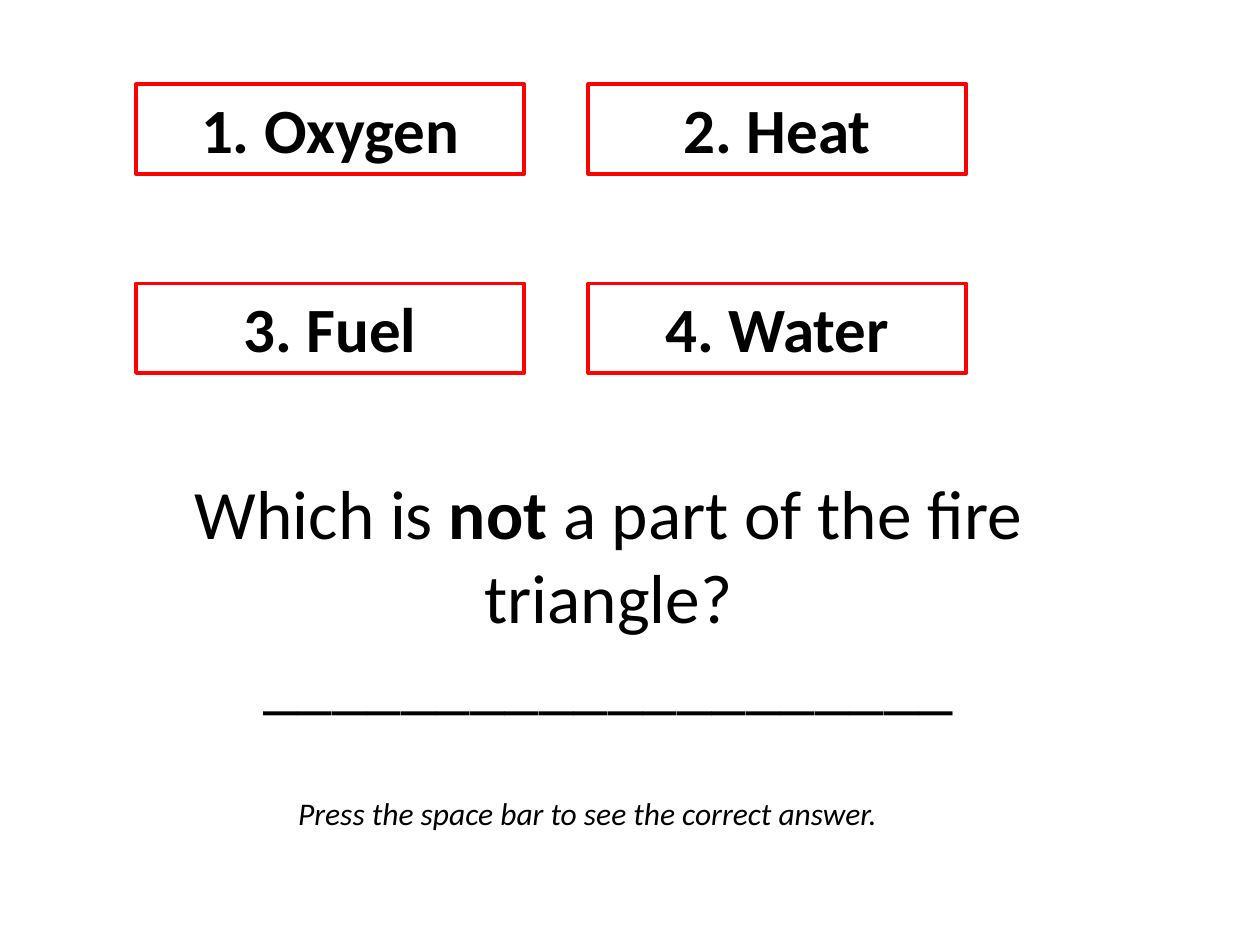
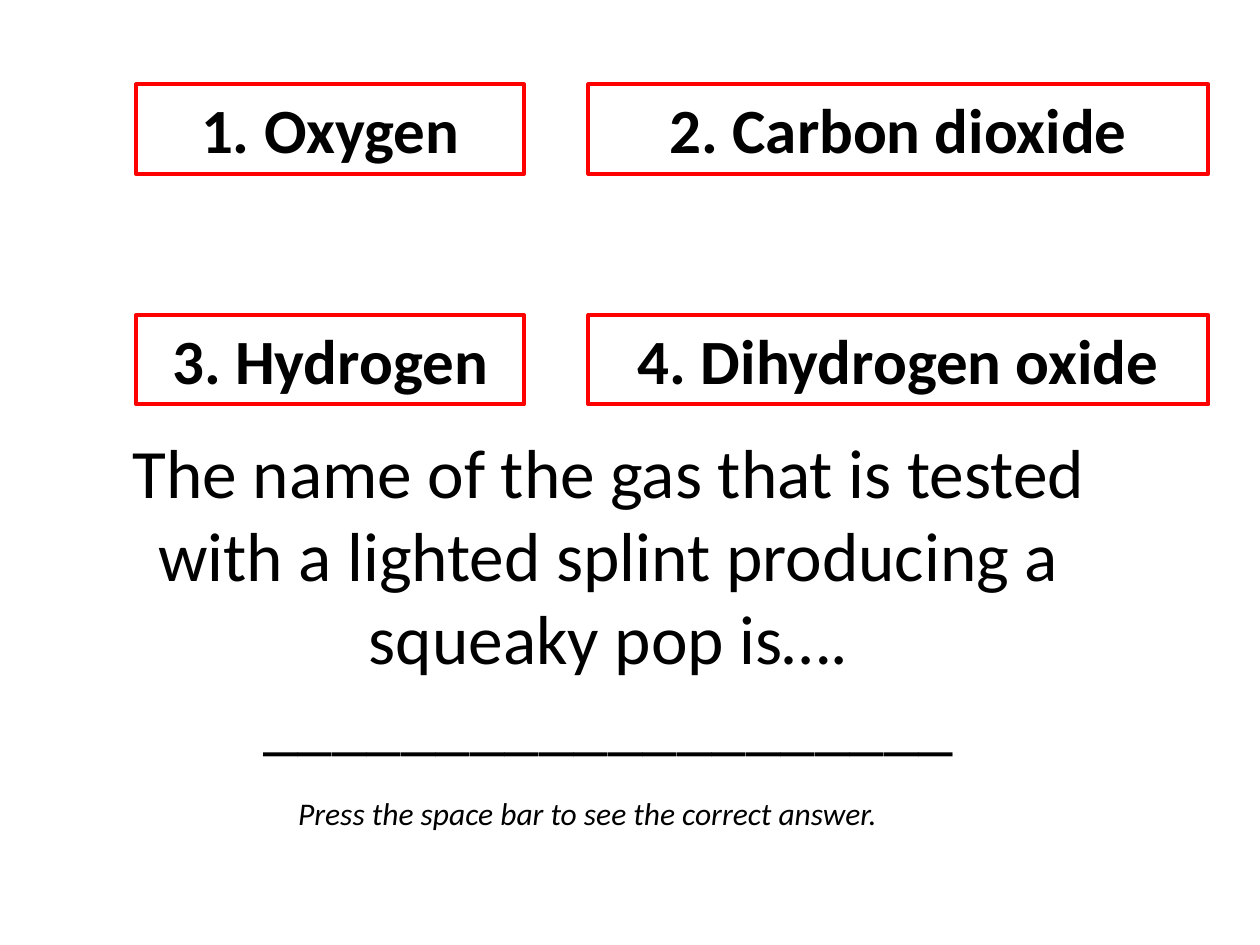
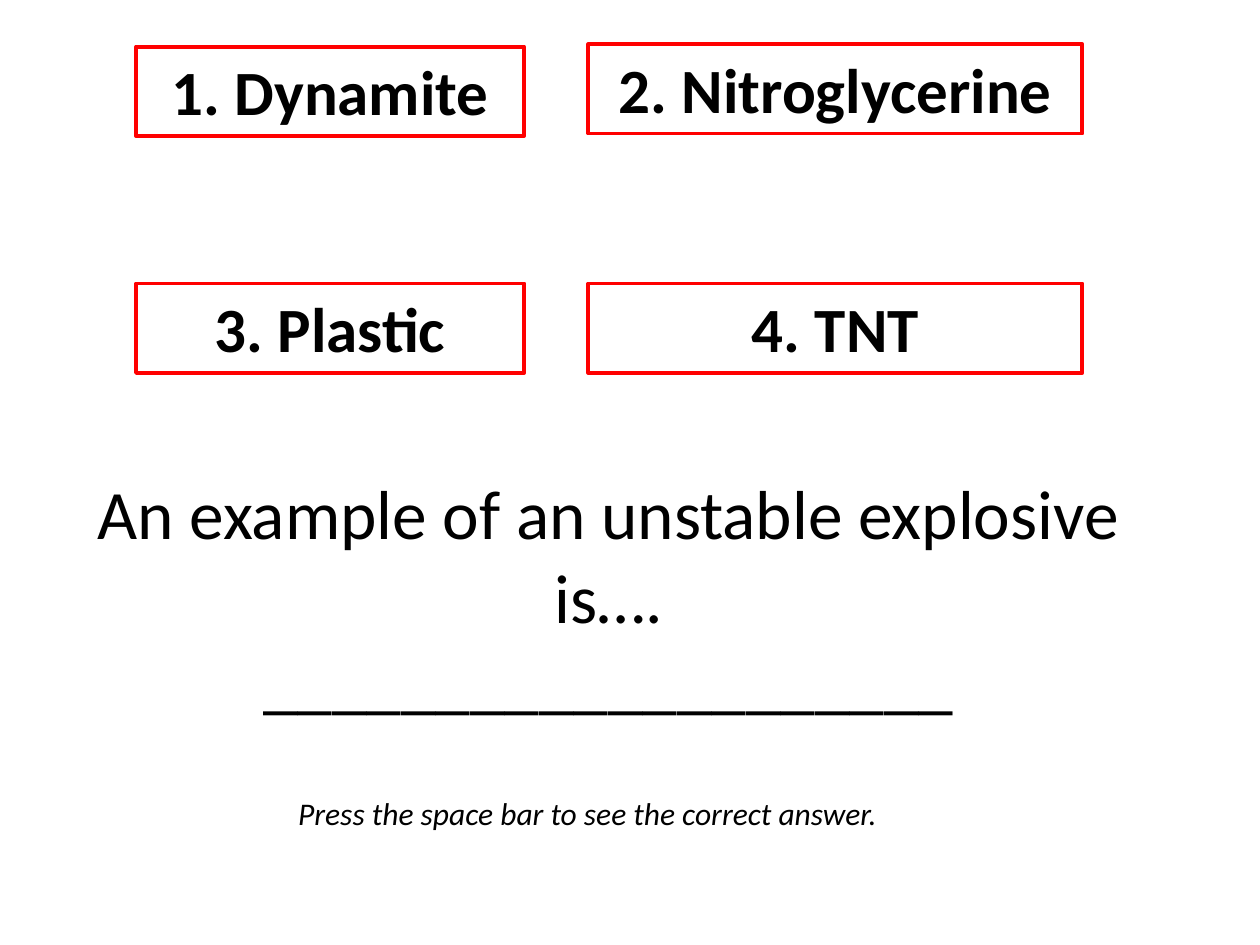
from pptx import Presentation
from pptx import util as u
from pptx.dml.color import RGBColor
from pptx.enum import shapes, text

COLOURS = {"ink": "000000", "border": "FF0000", "paper": "FFFFFF"}
FONT = "Calibri"
COLUMN_LEFTS = (1.08, 4.67)
LEFT_WIDTH = 3.08
ANSWER_HEIGHT = 0.71
BLANK_LINE = "_" * 20

# Each question is a list of (words, bold); tops has one value per answer.
QUIZ = [
    dict(answers=["Oxygen", "Heat", "Fuel", "Water"],
         tops=[0.67, 0.67, 2.25, 2.25], right_width=3,
         question=[("Which is ", False), ("not", True),
                   (" a part of the fire triangle?", False)]),
    dict(answers=["Oxygen", "Carbon dioxide", "Hydrogen", "Dihydrogen oxide"],
         tops=[0.67, 0.67, 2.5, 2.5], right_width=4.92,
         question=[("The name of the gas that is tested with a lighted splint "
                    "producing a squeaky pop is….", False)]),
    dict(answers=["Dynamite", "Nitroglycerine", "Plastic", "TNT"],
         tops=[0.37, 0.35, 2.25, 2.25], right_width=3.92,
         question=[("An example of an unstable explosive is….", False)]),
]


def colour(name):
    return RGBColor.from_string(COLOURS[name])


def inches(*lengths):
    return [u.Inches(n) for n in lengths]


def style_paragraph(p, size, bold=None, italic=None):
    p.alignment = text.PP_ALIGN.CENTER
    f = p.font
    f.name, f.size, f.bold, f.italic = FONT, u.Pt(size), bold, italic
    f.color.rgb = colour("ink")


def add_text(s, box, anchor=text.MSO_ANCHOR.TOP):
    """Add a wrapping text box and return its first paragraph."""
    tf = s.shapes.add_textbox(*inches(*box)).text_frame
    tf.word_wrap = True
    tf.vertical_anchor = anchor
    return tf.paragraphs[0]


def add_question(s, parts):
    p = add_text(s, (0.58, 3.92, 8.5, 1.61), text.MSO_ANCHOR.MIDDLE)
    style_paragraph(p, 39.6)
    for words, bold in parts:
        r = p.add_run()
        r.text = words
        r.font.bold = bold
    p.add_line_break()
    p.add_run().text = BLANK_LINE


def add_answer(s, box, label):
    sp = s.shapes.add_shape(shapes.MSO_SHAPE.RECTANGLE, *inches(*box))
    sp.shadow.inherit = False
    sp.fill.background()
    sp.line.color.rgb = colour("border")
    sp.line.width = u.Pt(2.25)
    tf = sp.text_frame
    tf.word_wrap = True
    tf.vertical_anchor = text.MSO_ANCHOR.TOP
    p = tf.paragraphs[0]
    p.text = label
    style_paragraph(p, 36, bold=True)


def add_answers(s, answers, tops, right_width):
    widths = (LEFT_WIDTH, right_width)
    for i, (answer, top) in enumerate(zip(answers, tops)):
        column = i % 2
        box = (COLUMN_LEFTS[column], top, widths[column], ANSWER_HEIGHT)
        add_answer(s, box, f"{i + 1}. {answer}")


def add_hint(s):
    p = add_text(s, (1.25, 6.25, 6.83, 0.4))
    p.text = "Press the space bar to see the correct answer."
    style_paragraph(p, 18, italic=True)


def add_quiz_slide(prs, question, answers, tops, right_width):
    s = prs.slides.add_slide(prs.slide_layouts[6])
    s.background.fill.solid()
    s.background.fill.fore_color.rgb = colour("paper")
    add_question(s, question)
    add_answers(s, answers, tops, right_width)
    add_hint(s)


def main():
    prs = Presentation()
    prs.slide_width, prs.slide_height = inches(10, 7.5)
    for item in QUIZ:
        add_quiz_slide(prs, **item)
    prs.save("out.pptx")


if __name__ == "__main__":
    main()
